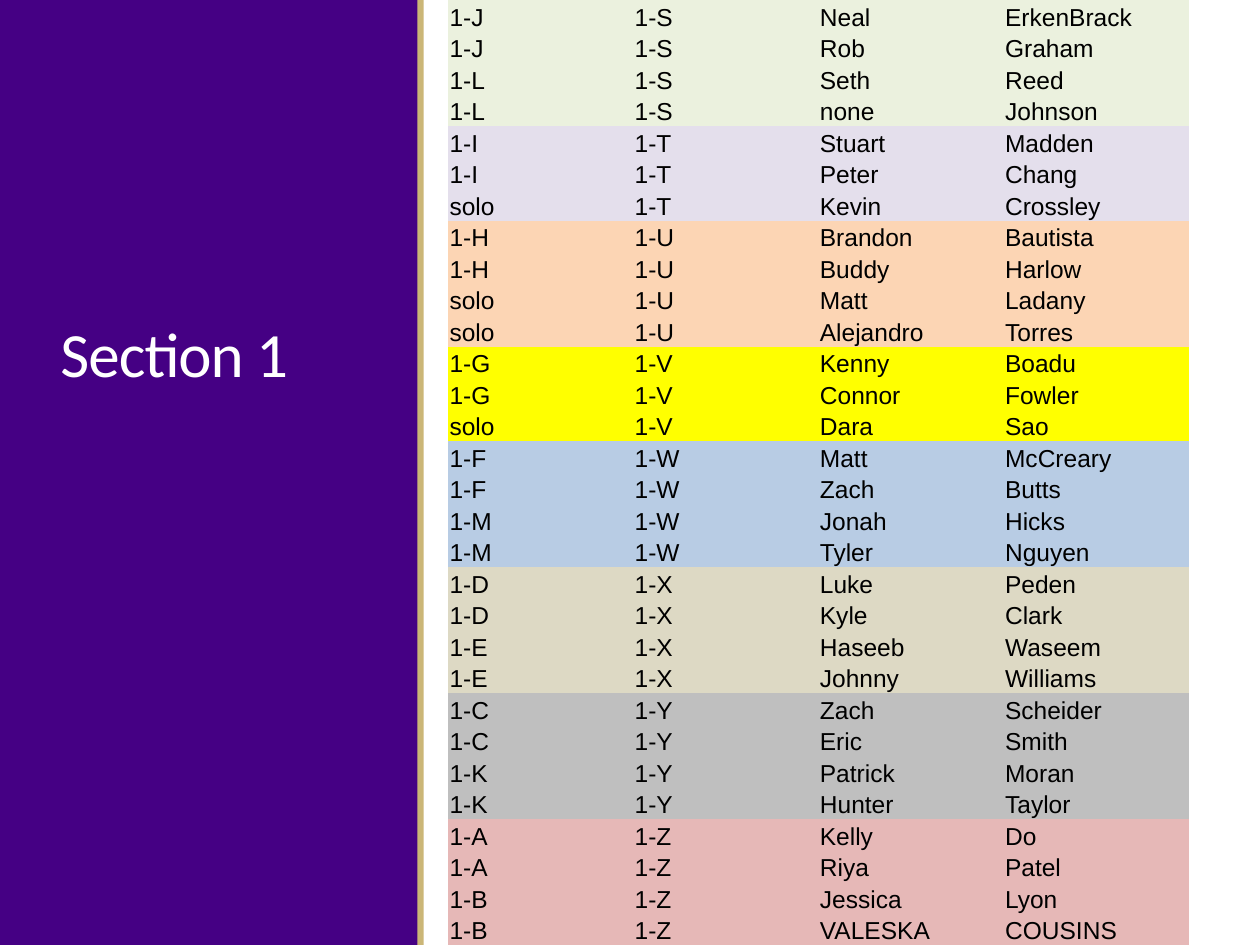
from dataclasses import dataclass

from pptx import Presentation
from pptx.dml.color import RGBColor
from pptx.enum import shapes, text
from pptx.util import Pt


@dataclass(frozen=True)
class Theme:
    purple: str = "450084"
    gold: str = "CBB677"
    white: str = "FFFFFF"
    black: str = "000000"
    title_font: str = "Calibri"
    roster_font: str = "Arial"
    title_size: int = 36
    roster_size: int = 14


def style_run(run, font, size, color):
    run.font.name = font
    run.font.size = Pt(size)
    run.font.color.rgb = RGBColor.from_string(color)


theme = Theme()
NO_GRID_STYLE = "{2D5ABB26-0587-4C30-8999-92F81FD0307C}"

# (new group, group fill, [(old group, first name, last name), ...])
groups = [
    ("1-S", "EBF1DE", [("1-J", "Neal", "ErkenBrack"), ("1-J", "Rob", "Graham"),
                       ("1-L", "Seth", "Reed"), ("1-L", "none", "Johnson")]),
    ("1-T", "E4DFEC", [("1-I", "Stuart", "Madden"), ("1-I", "Peter", "Chang"),
                       ("solo", "Kevin", "Crossley")]),
    ("1-U", "FCD5B4", [("1-H", "Brandon", "Bautista"), ("1-H", "Buddy", "Harlow"),
                       ("solo", "Matt", "Ladany"), ("solo", "Alejandro", "Torres")]),
    ("1-V", "FFFF00", [("1-G", "Kenny", "Boadu"), ("1-G", "Connor", "Fowler"),
                       ("solo", "Dara", "Sao")]),
    ("1-W", "B8CCE4", [("1-F", "Matt", "McCreary"), ("1-F", "Zach", "Butts"),
                       ("1-M", "Jonah", "Hicks"), ("1-M", "Tyler", "Nguyen")]),
    ("1-X", "DDD9C4", [("1-D", "Luke", "Peden"), ("1-D", "Kyle", "Clark"),
                       ("1-E", "Haseeb", "Waseem"), ("1-E", "Johnny", "Williams")]),
    ("1-Y", "BFBFBF", [("1-C", "Zach", "Scheider"), ("1-C", "Eric", "Smith"),
                       ("1-K", "Patrick", "Moran"), ("1-K", "Hunter", "Taylor")]),
    ("1-Z", "E6B8B7", [("1-A", "Kelly", "Do"), ("1-A", "Riya", "Patel"),
                       ("1-B", "Jessica", "Lyon"), ("1-B", "VALESKA", "COUSINS")]),
]
roster = [(fill, (old, new, first, last))
          for new, fill, members in groups
          for old, first, last in members]

prs = Presentation()
prs.slide_width, prs.slide_height = Pt(720), Pt(540)
slide = prs.slides.add_slide(prs.slide_layouts[6])

# Side panel and its gold edge
for left, width, color in [(0, 239, theme.purple), (238.5, 3.6, theme.gold)]:
    band = slide.shapes.add_shape(shapes.MSO_SHAPE.RECTANGLE,
                                  Pt(left), 0, Pt(width), Pt(540))
    band.shadow.inherit = False
    band.fill.solid()
    band.fill.fore_color.rgb = RGBColor.from_string(color)
    band.line.fill.background()

# Title
title = slide.shapes.add_textbox(Pt(27.4), Pt(46.8), Pt(188.6), Pt(180)).text_frame
title.word_wrap = True
title.vertical_anchor = text.MSO_ANCHOR.BOTTOM
title.text = "Section 1"
heading = title.paragraphs[0]
heading.line_spacing = 0.85
style_run(heading.runs[0], theme.title_font, theme.title_size, theme.white)
heading.runs[0].font._element.set("spc", "-50")

# Roster
frame = slide.shapes.add_table(len(roster), 4, Pt(256.2), 0, Pt(423.36), Pt(540))
frame.element.xpath(".//a:tableStyleId")[0].text = NO_GRID_STYLE
table = frame.table
table.first_row = table.horz_banding = False
for column in table.columns:
    column.width = Pt(423.36 / 4)

for row, (fill, entries) in zip(table.rows, roster):
    row.height = Pt(540 / len(roster))
    for cell, entry in zip(row.cells, entries):
        cell.fill.solid()
        cell.fill.fore_color.rgb = RGBColor.from_string(fill)
        cell.margin_left = cell.margin_right = cell.margin_top = Pt(0.7)
        cell.margin_bottom = 0
        cell.vertical_anchor = text.MSO_ANCHOR.BOTTOM
        cell.text_frame.text = entry
        style_run(cell.text_frame.paragraphs[0].runs[0],
                  theme.roster_font, theme.roster_size, theme.black)

prs.save("out.pptx")
